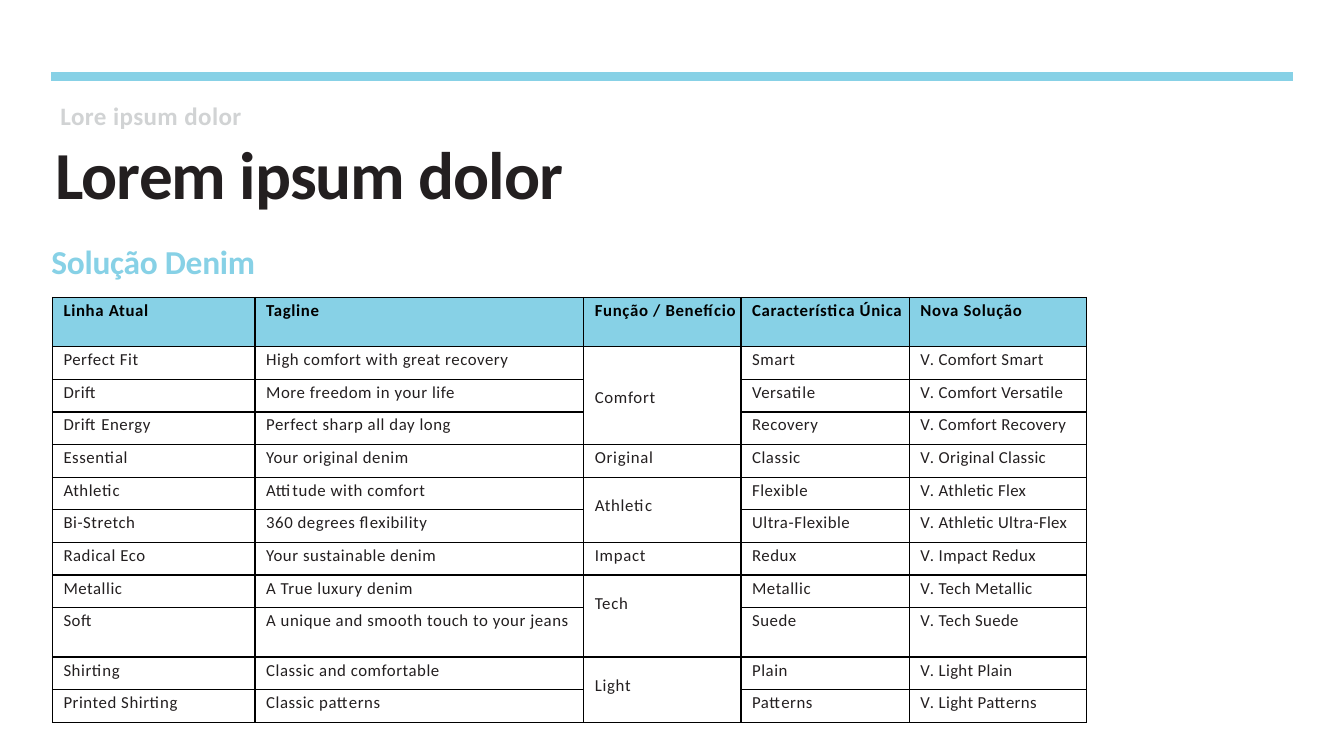
from dataclasses import dataclass

from lxml import etree
from pptx import Presentation
from pptx import util as u
from pptx.dml.color import RGBColor
from pptx.enum import shapes, text
from pptx.oxml import ns


@dataclass(frozen=True)
class Theme:
    """Colours, type sizes and font of the slide."""
    font: str = "Calibri"
    sky: str = "87D1E6"
    grey: str = "D1D3D4"
    ink: str = "231F20"
    black: str = "000000"
    title: float = 48
    section: float = 23.9
    kicker: float = 17.9
    cell: float = 12


THEME = Theme()
WIDTHS = (2.01, 3.26, 1.56, 1.67, 1.76)
TALL_ROWS = (0, 9)
TALL = 0.49
MERGE_TOPS = {1: 0.03, 2: 0.18, 3: 0.41}
HEADERS = ("Linha Atual", "Tagline", "Função / Benefício", "Característica Única", "Nova Solução")
GROUPS = (
    ("Comfort", (
        ("Perfect Fit", "High comfort with great recovery", "Smart", "Comfort Smart"),
        ("Drift", "More freedom in your life", "Versatile", "Comfort Versatile"),
        ("Drift Energy", "Perfect sharp all day long", "Recovery", "Comfort Recovery"))),
    ("Original", (
        ("Essential", "Your original denim", "Classic", "Original Classic"),)),
    ("Athletic", (
        ("Athletic", "Attitude with comfort", "Flexible", "Athletic Flex"),
        ("Bi-Stretch", "360 degrees flexibility", "Ultra-Flexible", "Athletic Ultra-Flex"))),
    ("Impact", (
        ("Radical Eco", "Your sustainable denim", "Redux", "Impact Redux"),)),
    ("Tech", (
        ("Metallic", "A True luxury denim", "Metallic", "Tech Metallic"),
        ("Soft", "A unique and smooth touch to your jeans", "Suede", "Tech Suede"))),
    ("Light", (
        ("Shirting", "Classic and comfortable", "Plain", "Light Plain"),
        ("Printed Shirting", "Classic patterns", "Patterns", "Light Patterns"))),
)


def add_run(p, words, size, color, bold=False, spacing=0):
    """Add formatted words to a paragraph, with letter spacing in points."""
    r = p.add_run()
    r.text = words
    f = r.font
    f.name, f.size, f.bold = THEME.font, u.Pt(size), bold
    f.color.rgb = RGBColor.from_string(color)
    r.font._element.set("spc", str(round(spacing * 100)))


def write_line(sp, box, words, anchor=text.MSO_ANCHOR.TOP, **fmt):
    """Place a text shape in its box and write one left-aligned line."""
    sp.left, sp.top, sp.width, sp.height = (u.Inches(n) for n in box)
    tf = sp.text_frame
    tf.word_wrap, tf.auto_size = True, text.MSO_AUTO_SIZE.NONE
    tf.vertical_anchor = anchor
    tf.margin_left = tf.margin_right = tf.margin_bottom = 0
    tf.margin_top = u.Inches(0.01)
    p = tf.paragraphs[0]
    p.alignment = text.PP_ALIGN.LEFT
    add_run(p, words, **fmt)


def add_rule(slide, x, y, width):
    """Draw the coloured rule across the top of the slide."""
    line = slide.shapes.add_connector(
        shapes.MSO_CONNECTOR.STRAIGHT, u.Inches(x), u.Inches(y), u.Inches(x + width), u.Inches(y))
    line.line.color.rgb = RGBColor.from_string(THEME.sky)
    line.line.width = u.Pt(6)
    etree.SubElement(line._element.spPr, ns.qn("a:effectLst"))


def add_headings(slide, x, y):
    """Write the kicker, title and section heading down from the given corner."""
    kicker = slide.shapes.add_textbox(0, 0, 0, 0)
    write_line(kicker, (x + 0.09, y, 3.13, 0.31), "Lore ipsum dolor",
               size=THEME.kicker, color=THEME.grey, bold=True, spacing=0.3)
    write_line(slide.shapes.title, (x + 0.04, y + 0.31, 6.11, 0.82), "Lorem ipsum dolor",
               anchor=text.MSO_ANCHOR.MIDDLE,
               size=THEME.title, color=THEME.ink, bold=True, spacing=-0.7)
    section = slide.shapes.add_textbox(0, 0, 0, 0)
    write_line(section, (x, y + 1.39, 2.71, 0.41), "Solução Denim",
               size=THEME.section, color=THEME.sky, bold=True, spacing=-0.2)


def style_cell(cell, fill=None):
    """Give a cell thin black borders, its insets and an optional fill."""
    tc_pr = cell._tc.get_or_add_tcPr()
    for i, side in enumerate(("lnL", "lnR", "lnT", "lnB")):
        ln = etree.Element(ns.qn(f"a:{side}"), w=str(u.Pt(1)))
        solid = etree.SubElement(ln, ns.qn("a:solidFill"))
        etree.SubElement(solid, ns.qn("a:srgbClr"), val=THEME.black)
        tc_pr.insert(i, ln)
    if fill:
        cell.fill.solid()
        cell.fill.fore_color.rgb = RGBColor.from_string(fill)
    else:
        cell.fill.background()
    cell.margin_left, cell.margin_top = u.Inches(0.11), u.Inches(0.03)
    cell.margin_right = cell.margin_bottom = 0


def write_cell(cell, words, color=THEME.ink, bold=False, spacing=0.4):
    """Write one run of table text."""
    add_run(cell.text_frame.paragraphs[0], words, THEME.cell, color, bold, spacing)


def add_solutions(slide, x, y, height):
    """Build the table of denim lines, merging each benefit over its group."""
    count = 1 + sum(len(lines) for _, lines in GROUPS)
    table = slide.shapes.add_table(count, len(WIDTHS), u.Inches(x), u.Inches(y),
                                   u.Inches(sum(WIDTHS)), u.Inches(height)).table
    table.first_row = table.horz_banding = False
    for column, width in zip(table.columns, WIDTHS):
        column.width = u.Inches(width)
    short = (height - TALL * len(TALL_ROWS)) / (count - len(TALL_ROWS))
    for i, row in enumerate(table.rows):
        row.height = u.Inches(TALL if i in TALL_ROWS else short)
        for cell in row.cells:
            style_cell(cell, None if i else THEME.sky)
    for j, words in enumerate(HEADERS):
        write_cell(table.cell(0, j), words, THEME.black, True, 0.48)
    i = 1
    for benefit, lines in GROUPS:
        group = table.cell(i, 2)
        if len(lines) > 1:
            group.merge(table.cell(i + len(lines) - 1, 2))
        group.margin_top = u.Inches(MERGE_TOPS[len(lines)])
        write_cell(group, benefit, spacing=0.5)
        for name, tagline, feature, solution in lines:
            for j, words in ((0, name), (1, tagline), (3, feature)):
                write_cell(table.cell(i, j), words)
            write_cell(table.cell(i, 4), "V", spacing=-0.9)
            write_cell(table.cell(i, 4), ". " + solution, spacing=0.25)
            i += 1


def main():
    """Build and save the slide."""
    prs = Presentation()
    prs.slide_width, prs.slide_height = u.Inches(13.33), u.Inches(7.5)
    slide = prs.slides.add_slide(prs.slide_layouts[5])
    add_rule(slide, 0.51, 0.76, 12.31)
    add_headings(slide, 0.51, 0.99)
    add_solutions(slide, 0.52, 2.95, 4.22)
    prs.save("out.pptx")


if __name__ == "__main__":
    main()
